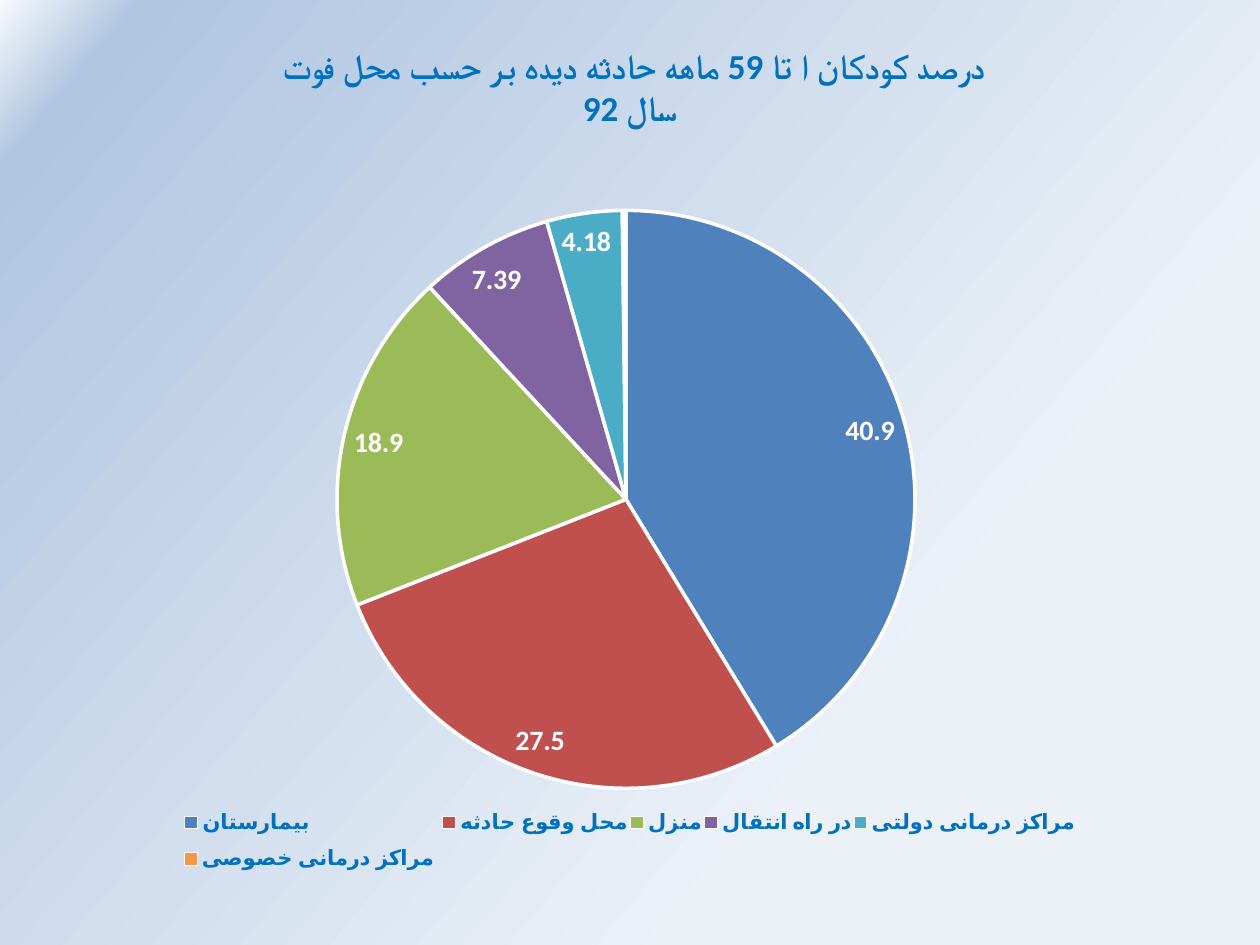
from dataclasses import dataclass

from lxml.etree import SubElement
from pptx import Presentation
from pptx.chart.data import CategoryChartData
from pptx.dml.color import RGBColor as RGB
from pptx.enum.chart import XL_CHART_TYPE as CT, XL_LABEL_POSITION as LP, XL_LEGEND_POSITION as LEG
from pptx.enum.text import MSO_ANCHOR as ANCHOR, PP_ALIGN as ALIGN
from pptx.oxml.ns import qn
from pptx.util import Inches, Pt


@dataclass(frozen=True)
class Theme:
    font: str = "Calibri"
    accent: str = "0070C0"
    white: str = "FFFFFF"
    black: str = "000000"
    slices: tuple = ("4F81BD", "C0504D", "9BBB59", "8064A2", "4BACC6", "F79646")
    backdrop: tuple = ((0, "F6F9FC"), (7, "B0C6E1"), (72, "ECF1F8"))
    title: int = 20
    label: int = 16
    legend: int = 12
    body: int = 10
    border: float = 2


PLACES = {
    "بیمارستان": 40.9,
    "محل وقوع حادثه": 27.5,
    "منزل": 18.9,
    "در راه انتقال": 7.39,
    "مراکز درمانی دولتی": 4.18,
    "مراکز درمانی خصوصی ": 0.2,
}
TITLE = ("درصد کودکان ا تا 59 ماهه حادثه دیده بر حسب محل فوت ", "سال 92")
PLOT = {"x": 0.036, "y": 0.099, "w": 0.921, "h": 0.757}
LEGEND = {"x": 0.105, "y": 0.867, "w": 0.79, "h": 0.115}
MIN_LABELLED = 1


def style_font(font, size, color, name, bold=False):
    font.name, font.size, font.bold = name, Pt(size), bold
    font.color.rgb = RGB.from_string(color)


def write(p, text, align=ALIGN.CENTER, rtl=True, **fmt):
    p.alignment = align
    if rtl:
        p._p.get_or_add_pPr().set("rtl", "1")
    r = p.add_run()
    r.text = text
    style_font(r.font, **fmt)
    SubElement(r._r.get_or_add_rPr(), qn("a:cs"), typeface=fmt["name"])


class Deck:
    """Draws styled elements on the current slide."""

    def __init__(self, prs, theme):
        self.theme = theme
        self.s = prs.slides.add_slide(prs.slide_layouts[6])

    def background(self, angle):
        fill = self.s.background.fill
        fill.gradient()
        fill.gradient_angle = 360 - angle
        stops = next(self.s.element.iter(qn("a:gsLst")))
        for stop in list(stops):
            stops.remove(stop)
        for pos, color in self.theme.backdrop:
            stop = SubElement(stops, qn("a:gs"), pos=str(pos * 1000))
            SubElement(stop, qn("a:srgbClr"), val=color)

    def title(self, lines, x, y, w, h):
        t = self.theme
        tf = self.s.shapes.add_textbox(*map(Inches, (x, y, w, h))).text_frame
        tf.word_wrap = True
        tf.vertical_anchor = ANCHOR.MIDDLE
        p = tf.paragraphs[0]
        for i, line in enumerate(lines):
            if i:
                p.add_line_break()
            write(p, line, size=t.title, color=t.accent, name=t.font, bold=True)

    def pie(self, values, x, y, w, h):
        t = self.theme
        data = CategoryChartData()
        data.categories = list(values)
        data.add_series("Series 1", list(values.values()))
        chart = self.s.shapes.add_chart(CT.PIE, *map(Inches, (x, y, w, h)), data).chart
        style_font(chart.font, t.body, t.black, t.font)
        chart.has_title = False
        chart.has_legend = True
        chart.legend.position = LEG.BOTTOM
        chart.legend.include_in_layout = False
        style_font(chart.legend.font, t.legend, t.accent, t.font, bold=True)
        plot = chart.plots[0]
        plot.vary_by_categories = True
        self.slices(plot.series[0], values.values())
        self.place(chart, "c:plotArea", PLOT, 0, inner=True)
        self.place(chart, "c:legend", LEGEND, 1)

    def slices(self, series, values):
        t = self.theme
        series.data_labels.show_value = False
        for i, (value, color) in enumerate(zip(values, t.slices)):
            point = series.points[i]
            point.format.fill.solid()
            point.format.fill.fore_color.rgb = RGB.from_string(color)
            point.format.line.color.rgb = RGB.from_string(t.white)
            point.format.line.width = Pt(t.border)
            if value >= MIN_LABELLED:
                label = point.data_label
                style_font(label.font, t.label, t.white, t.font, bold=True)
                label.position = LP.BEST_FIT

    def place(self, chart, tag, box, index, inner=False):
        part = next(chart.element.iter(qn(tag)))
        for old in part.findall(qn("c:layout")):
            part.remove(old)
        layout = SubElement(part, qn("c:layout"))
        part.insert(index, layout)
        manual = SubElement(layout, qn("c:manualLayout"))
        if inner:
            SubElement(manual, qn("c:layoutTarget"), val="inner")
        for side in "xy":
            SubElement(manual, qn(f"c:{side}Mode"), val="edge")
        for side, share in box.items():
            SubElement(manual, qn(f"c:{side}"), val=str(share))


def main():
    prs = Presentation()
    prs.slide_width, prs.slide_height = Inches(10), Inches(7.5)
    deck = Deck(prs, Theme())
    deck.background(40)
    deck.title(TITLE, 0.5, 0.3, 9, 0.77)
    deck.pie(PLACES, 0.5, 1.07, 9, 6.06)
    prs.save("out.pptx")


if __name__ == "__main__":
    main()
